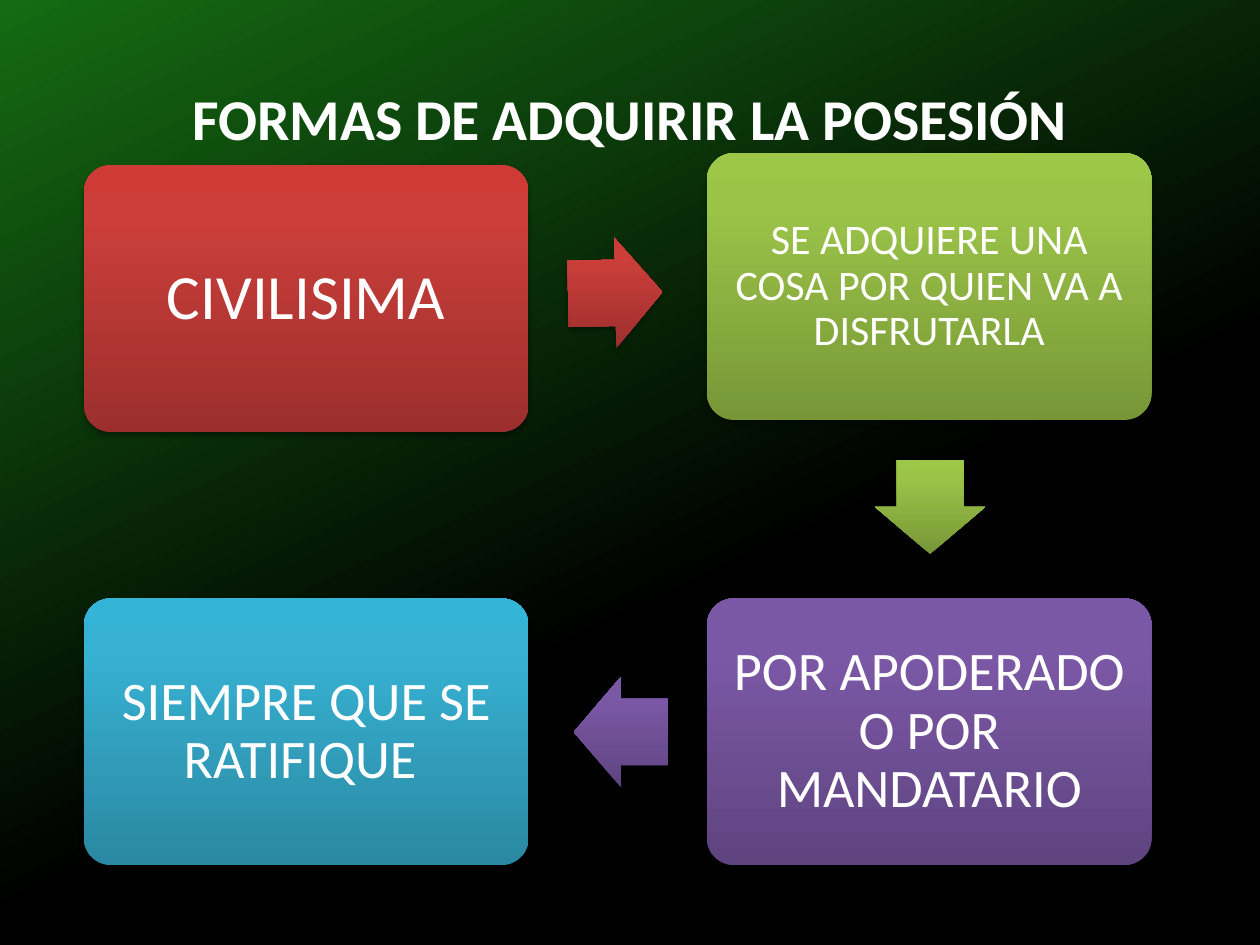
import pptx
import pptx.util
import pptx.dml.color
import pptx.enum.shapes
import pptx.enum.text
import pptx.oxml
from pptx.oxml.ns import nsdecls, qn

Pt = pptx.util.Pt
SHAPES = pptx.enum.shapes.MSO_SHAPE
ALIGN = pptx.enum.text.PP_ALIGN
ANCHOR = pptx.enum.text.MSO_ANCHOR


def color(value):
    return pptx.dml.color.RGBColor.from_string(value)


class Board:
    font = "Calibri"
    text_color = "FFFFFF"
    box_size = (254, 152.4)
    arrow_size = (54, 63.2)

    def __init__(self, page):
        self.page = page

    def gradient(self, fill, stops, angle):
        """Fill with (position, colour) stops; angle runs counter-clockwise."""
        fill.gradient()
        fill.gradient_angle = angle
        properties = fill._fill._gradFill
        properties.set("rotWithShape", "0")
        stop_list = properties.find(qn("a:gsLst"))
        for stop in list(stop_list):
            stop_list.remove(stop)
        for position, value in stops:
            stop_list.append(pptx.oxml.parse_xml(
                f'<a:gs {nsdecls("a")} pos="{position * 1000}">'
                f'<a:srgbClr val="{value}"/></a:gs>'))

    def background(self, stops, angle):
        self.gradient(self.page.background.fill, stops, angle)

    def label(self, paragraph, text, size, bold=False):
        paragraph.text = text
        paragraph.alignment = ALIGN.CENTER
        paragraph.font.name = self.font
        paragraph.font.size = Pt(size)
        paragraph.font.bold = bold
        paragraph.font.color.rgb = color(self.text_color)

    def title(self, text, left, top, width, height, size):
        box = self.page.shapes.add_textbox(Pt(left), Pt(top), Pt(width), Pt(height))
        frame = box.text_frame
        frame.word_wrap = False
        frame.vertical_anchor = ANCHOR.MIDDLE
        self.label(frame.paragraphs[0], text, size, bold=True)

    def shape(self, kind, left, top, size, shades):
        shape = self.page.shapes.add_shape(kind, Pt(left), Pt(top), *map(Pt, size))
        shape.line.fill.background()
        self.gradient(shape.fill, zip((0, 80, 100), shades), 90)
        # Soft shadow straight below
        shape.shadow.inherit = False
        effects = shape._element.spPr.find(qn("a:effectLst"))
        effects.append(pptx.oxml.parse_xml(
            f'<a:outerShdw {nsdecls("a")} blurRad="{Pt(3.1)}" dist="{Pt(1.8)}" '
            'dir="5400000" rotWithShape="0"><a:srgbClr val="000000">'
            '<a:alpha val="35000"/></a:srgbClr></a:outerShdw>'))
        return shape

    def step(self, text, left, top, size, inset, shades):
        box = self.shape(SHAPES.ROUNDED_RECTANGLE, left, top, self.box_size, shades)
        box.adjustments[0] = 0.1
        frame = box.text_frame
        frame.word_wrap = True
        frame.vertical_anchor = ANCHOR.MIDDLE
        frame.margin_left = frame.margin_right = Pt(inset)
        frame.margin_top = frame.margin_bottom = Pt(inset)
        para = frame.paragraphs[0]
        self.label(para, text, size)
        para.line_spacing = 0.9

    def arrow(self, left, top, rotation, shades):
        arrow = self.shape(SHAPES.RIGHT_ARROW, left, top, self.arrow_size, shades)
        arrow.adjustments[0] = 0.6
        arrow.adjustments[1] = 0.5
        arrow.rotation = rotation


# Shades run from the bottom edge to the top edge
RED = ("9C2F2D", "CB3E3A", "CE3B37")
GREEN = ("779737", "9BC348", "9DC746")
PURPLE = ("5F4480", "7B58A6", "7C57A8")
BLUE = ("2A88A2", "37B1D2", "34B4D6")
LEFT, RIGHT, BOTTOM = 48, 404, 342

deck = pptx.Presentation()
deck.slide_width, deck.slide_height = Pt(720), Pt(540)
board = Board(deck.slides.add_slide(deck.slide_layouts[6]))

# Background and title
board.background([(40, "000000"), (100, "156B13")], 115)
board.title("FORMAS DE ADQUIRIR LA POSESIÓN", 100, 43.5, 520, 47.5, 33)

# Steps, clockwise from the top left
board.step("CIVILISIMA", LEFT, 94.5, 36, 10.8, RED)
board.step("SE ADQUIERE UNA COSA POR QUIEN VA A DISFRUTARLA",
           RIGHT, 87.6, 24, 7.2, GREEN)
board.step("POR APODERADO O POR MANDATARIO", RIGHT, BOTTOM, 31, 9.3, PURPLE)
board.step("SIEMPRE QUE SE RATIFIQUE ", LEFT, BOTTOM, 31, 9.3, BLUE)

# Arrows between the steps
board.arrow(324.6, 135.8, 358.9, RED)
board.arrow(504.5, 258, 90, GREEN)
board.arrow(327.8, 386.7, 180, PURPLE)

deck.save("out.pptx")
